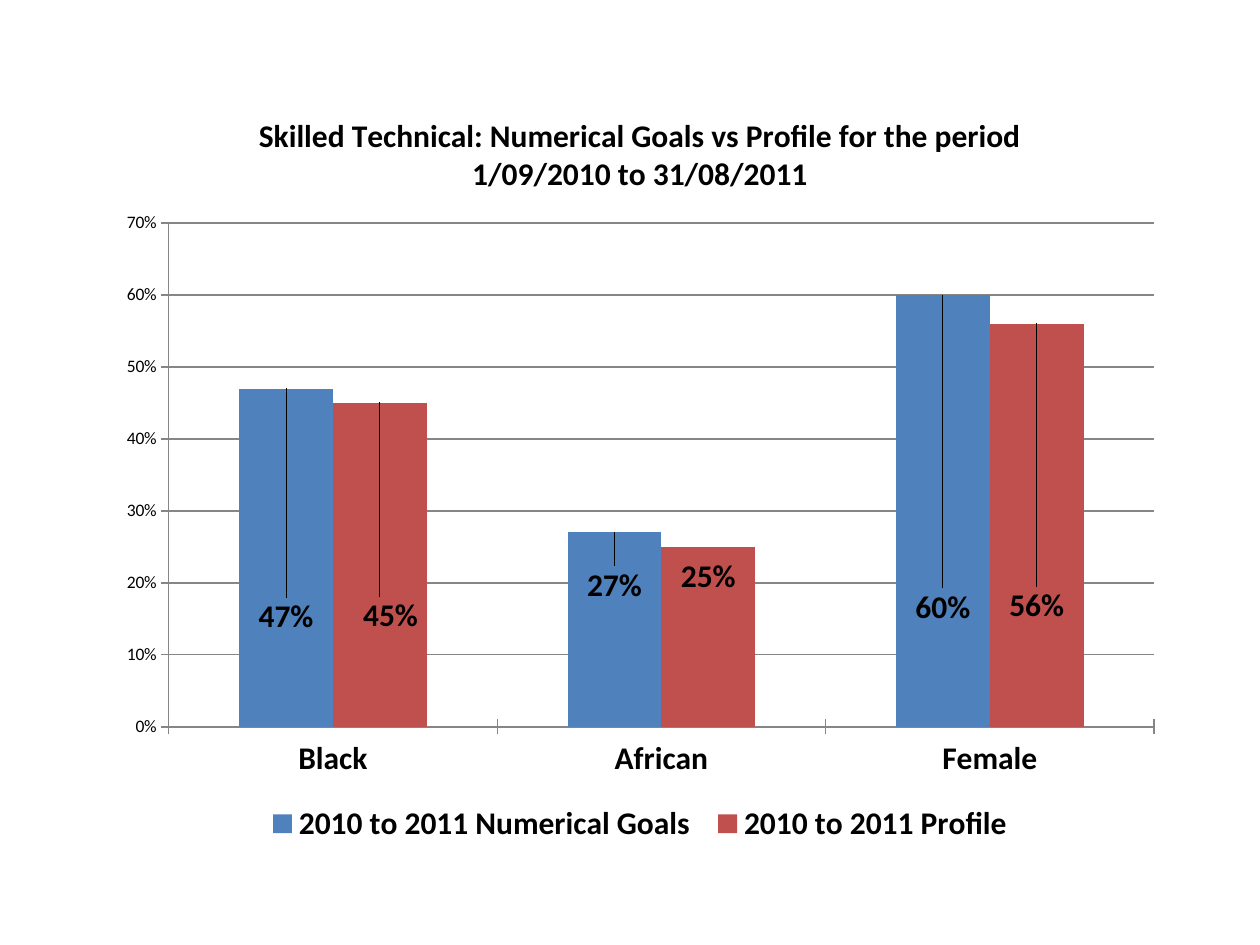
from dataclasses import dataclass

from lxml import etree
from pptx import Presentation
from pptx.chart.data import CategoryChartData
from pptx.dml.color import RGBColor
from pptx.enum.chart import XL_CHART_TYPE, XL_LABEL_POSITION, XL_LEGEND_POSITION, XL_TICK_MARK
from pptx.oxml.ns import qn
from pptx.util import Inches, Pt

COLUMNS = XL_CHART_TYPE.COLUMN_CLUSTERED
OUTSIDE_END = XL_LABEL_POSITION.OUTSIDE_END
LEGEND_BOTTOM = XL_LEGEND_POSITION.BOTTOM
TICK_CROSS = XL_TICK_MARK.CROSS
BLANK_LAYOUT = 6
PERCENT = "0%"


@dataclass(frozen=True)
class Theme:
    font: str = "Calibri"
    text: RGBColor = RGBColor(0x00, 0x00, 0x00)
    line: RGBColor = RGBColor(0x86, 0x86, 0x86)
    goals: RGBColor = RGBColor(0x4F, 0x81, 0xBD)
    profile: RGBColor = RGBColor(0xC0, 0x50, 0x4D)
    small: Pt = Pt(10)
    large: Pt = Pt(18)


@dataclass(frozen=True)
class Measure:
    name: str
    values: tuple[float, ...]
    color: RGBColor
    label_shifts: tuple[tuple[float, float], ...]


THEME = Theme()
TITLE = "Skilled Technical: Numerical Goals vs Profile for the period 1/09/2010 to 31/08/2011"
CATEGORIES = ("Black", "African", "Female")
MEASURES = (
    Measure("2010 to 2011 Numerical Goals ", (0.47, 0.27, 0.6), THEME.goals,
            ((0, 0.33), (0, 0.1), (0, 0.44))),
    Measure("2010 to 2011 Profile", (0.45, 0.25, 0.56), THEME.profile,
            ((0.01, 0.31), (0, 0.07), (0, 0.4))),
)


def style_font(font, size: Pt, bold: bool) -> None:
    font.name = THEME.font
    font.size = size
    font.bold = bold
    font.color.rgb = THEME.text


def make_layout(**settings: object):
    layout = etree.Element(qn("c:layout"))
    manual = etree.SubElement(layout, qn("c:manualLayout"))
    for name, value in settings.items():
        etree.SubElement(manual, qn(f"c:{name}")).set("val", str(value))
    return layout


def place_plot(chart) -> None:
    area = chart._chartSpace.find(f".//{qn('c:plotArea')}")
    for old_layout in area.findall(qn("c:layout")):
        area.remove(old_layout)
    area.insert(0, make_layout(layoutTarget="inner", xMode="edge", yMode="edge",
                               x=0.06, y=0.18, w=0.92, h=0.66))


def style_axis(axis, size: Pt, bold: bool) -> None:
    axis.major_tick_mark = TICK_CROSS
    axis.format.line.color.rgb = THEME.line
    style_font(axis.tick_labels.font, size, bold)


def style_series(series, measure: Measure) -> None:
    series.format.fill.solid()
    series.format.fill.fore_color.rgb = measure.color
    labels = series.data_labels
    labels.show_value = True
    labels.number_format = PERCENT
    labels.number_format_is_linked = False
    style_font(labels.font, THEME.large, True)
    for index, (x, y) in enumerate(measure.label_shifts):
        label = series.points[index].data_label
        label.position = OUTSIDE_END
        style_font(label.font, THEME.large, True)
    label_elements = labels._element.findall(qn("c:dLbl"))
    for element, (x, y) in zip(label_elements, measure.label_shifts):
        element.insert(1, make_layout(x=x, y=y))


def add_goals_chart(page) -> None:
    data = CategoryChartData(number_format=PERCENT)
    data.categories = CATEGORIES
    for measure in MEASURES:
        data.add_series(measure.name, measure.values)
    chart = page.shapes.add_chart(
        COLUMNS, Inches(0.83), Inches(0.68), Inches(8.5), Inches(6.06), data).chart
    style_font(chart.font, THEME.small, False)

    chart.has_title = True
    para = chart.chart_title.text_frame.paragraphs[0]
    para.text = TITLE
    style_font(para.font, THEME.large, True)
    chart.chart_title.include_in_layout = False

    chart.has_legend = True
    chart.legend.position = LEGEND_BOTTOM
    chart.legend.include_in_layout = False
    style_font(chart.legend.font, THEME.large, True)

    style_axis(chart.category_axis, THEME.large, True)
    values = chart.value_axis
    style_axis(values, THEME.small, False)
    values.minimum_scale, values.maximum_scale, values.major_unit = 0, 0.7, 0.1
    values.tick_labels.number_format = PERCENT
    values.tick_labels.number_format_is_linked = False
    values.has_major_gridlines = True
    values.major_gridlines.format.line.color.rgb = THEME.line

    plot = chart.plots[0]
    plot.gap_width = 150
    plot.overlap = 0
    plot.vary_by_categories = False
    for series, measure in zip(plot.series, MEASURES):
        style_series(series, measure)
    place_plot(chart)


def main() -> None:
    deck = Presentation()
    deck.slide_width, deck.slide_height = Inches(10), Inches(7.5)
    page = deck.slides.add_slide(deck.slide_layouts[BLANK_LAYOUT])
    add_goals_chart(page)
    deck.save("out.pptx")


if __name__ == "__main__":
    main()
